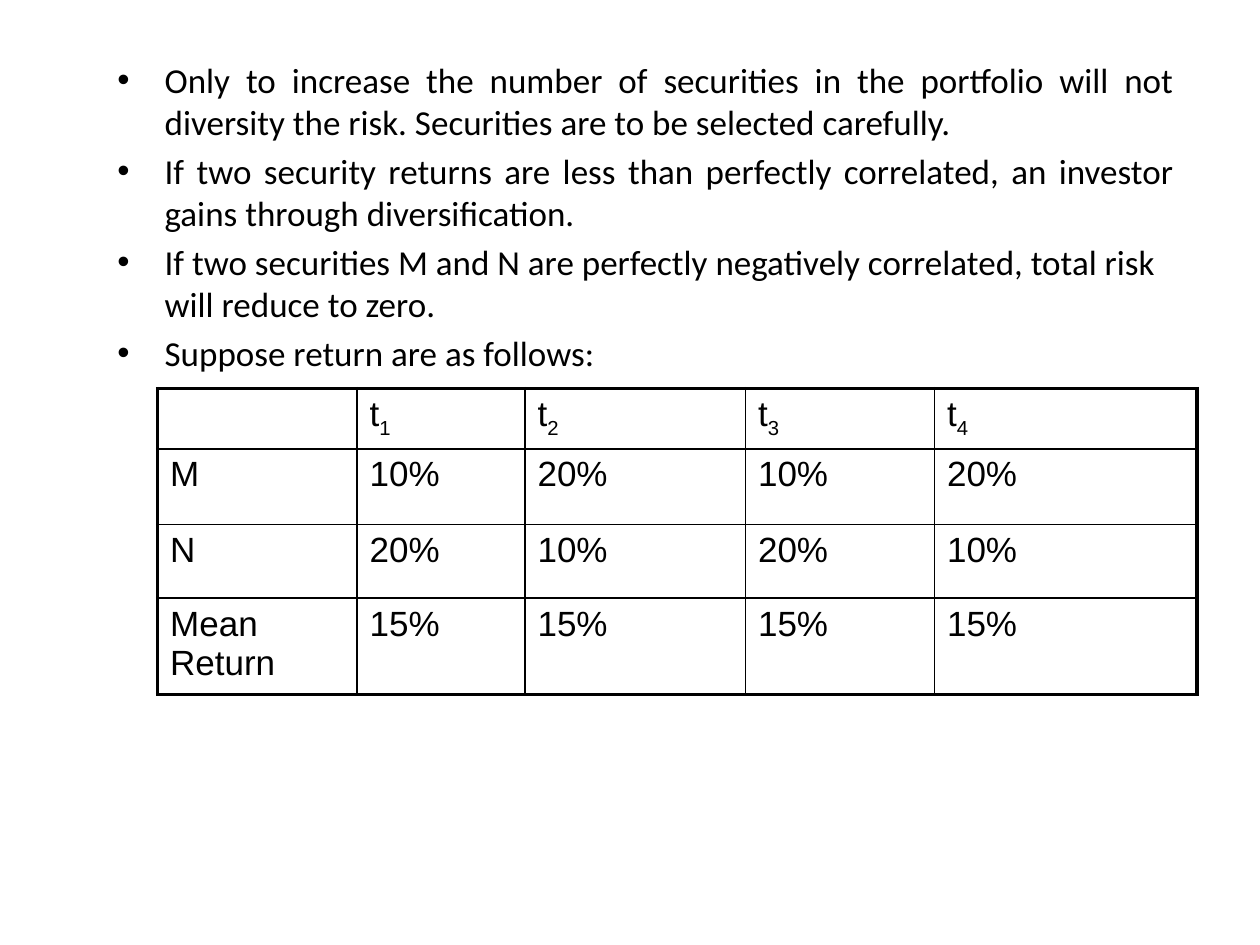
from lxml import etree
from pptx import Presentation
from pptx.dml.color import RGBColor
from pptx.enum import text
from pptx.oxml import ns
from pptx.util import Pt

BLACK = RGBColor(0, 0, 0)
TEXT_SIZE = Pt(20)
THIN, THICK = Pt(1), Pt(2.25)

BULLETS = [  # wording, justified
    ("Only to increase the number of securities in the portfolio will not "
     "diversity the risk. Securities are to be selected carefully.", True),
    ("If two security returns are less than perfectly correlated, an investor "
     "gains through diversification.", True),
    ("If two securities M and N are perfectly negatively correlated, total risk "
     "will reduce to zero.", False),
    ("Suppose return are as follows:", False),
]
PERIODS = ["1", "2", "3", "4"]
RETURNS = [
    ("M", "10%", "20%", "10%", "20%"),
    ("N", "20%", "10%", "20%", "10%"),
    ("Mean Return", "15%", "15%", "15%", "15%"),
]
COLUMN_WIDTHS = [114, 96, 126, 108, 150]
ROW_HEIGHTS = [32.6, 43.2, 42, 51.4]


def add_child(parent, tag, **attributes):
    return etree.SubElement(parent, ns.qn(tag), attributes)


def set_font(para, name):
    para.font.name = name
    para.font.size = TEXT_SIZE
    para.font.color.rgb = BLACK


def add_bullet(para):
    properties = para._p.get_or_add_pPr()
    properties.set("marL", str(Pt(27)))
    properties.set("indent", str(-Pt(27)))
    add_child(properties, "a:buFont", typeface="Arial")
    add_child(properties, "a:buChar", char="•")


def add_border(cell, side, width):
    line = add_child(cell._tc.get_or_add_tcPr(), f"a:ln{side}", w=str(width))
    add_child(add_child(line, "a:solidFill"), "a:srgbClr", val=str(BLACK))


deck = Presentation()
deck.slide_width, deck.slide_height = Pt(720), Pt(540)
page = deck.slides.add_slide(deck.slide_layouts[6])

# Bullet list
box = page.shapes.add_textbox(Pt(60), Pt(30), Pt(618), Pt(540))
frame = box.text_frame
frame.word_wrap = True
for index, (wording, justified) in enumerate(BULLETS):
    para = frame.add_paragraph() if index else frame.paragraphs[0]
    para.text = wording
    para.alignment = text.PP_ALIGN.JUSTIFY if justified else text.PP_ALIGN.LEFT
    para.space_before = Pt(4)
    add_bullet(para)
    set_font(para, "Calibri")

# Table of returns
row_count, column_count = len(ROW_HEIGHTS), len(COLUMN_WIDTHS)
table = page.shapes.add_table(
    row_count, column_count, Pt(90), Pt(222),
    Pt(sum(COLUMN_WIDTHS)), Pt(sum(ROW_HEIGHTS))).table
table.first_row = table.horz_banding = False
for column, width in zip(table.columns, COLUMN_WIDTHS):
    column.width = Pt(width)
for row, height in zip(table.rows, ROW_HEIGHTS):
    row.height = Pt(height)

# Header: t with a subscript number
for column, period in enumerate(PERIODS, start=1):
    para = table.cell(0, column).text_frame.paragraphs[0]
    para.add_run().text = "t"
    span = para.add_run()
    span.text = period
    span._r.get_or_add_rPr().set("baseline", "-25000")

for row, values in enumerate(RETURNS, start=1):
    for column, value in enumerate(values):
        table.cell(row, column).text = value

# Thick outer frame, thin inner grid
for row in range(row_count):
    for column in range(column_count):
        cell = table.cell(row, column)
        set_font(cell.text_frame.paragraphs[0], "Arial")
        outer_sides = {"L": column == 0, "R": column == column_count - 1,
                       "T": row == 0, "B": row == row_count - 1}
        for side, outer in outer_sides.items():
            add_border(cell, side, THICK if outer else THIN)
        cell.fill.background()

deck.save("out.pptx")
